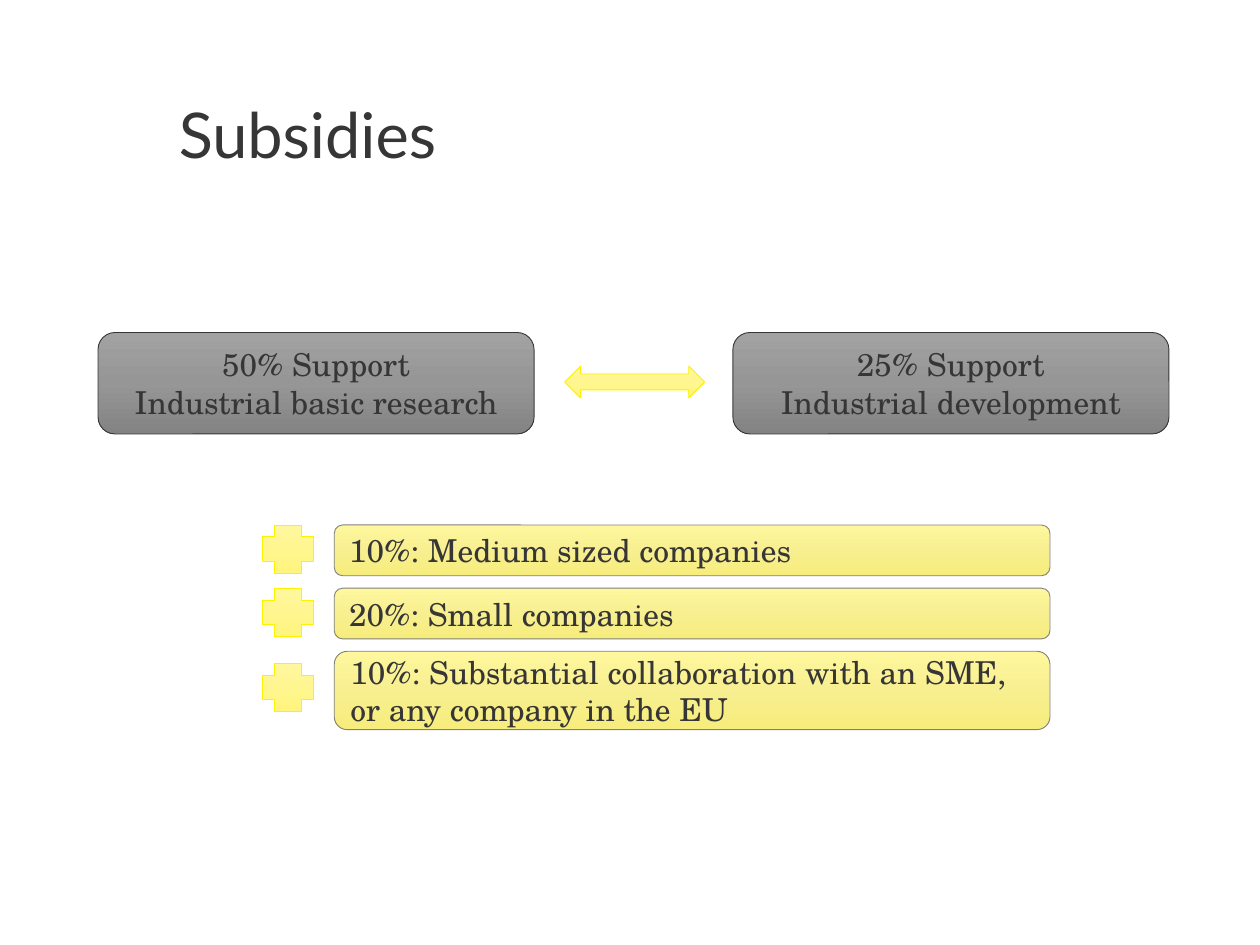
from copy import deepcopy

from pptx import Presentation
from pptx.dml.color import RGBColor
from pptx.enum.shapes import MSO_SHAPE as Shape
from pptx.enum.text import MSO_ANCHOR as Anchor, MSO_AUTO_SIZE as AutoSize, PP_ALIGN as Align
from pptx.oxml.ns import qn
from pptx.util import Pt

COLORS = {"text": "373636", "support_line": "373636", "accent_line": "FFF200", "bonus_line": "808080"}
GRADIENTS = {
    "support": ("A2A2A2", "969696", "838383"),
    "accent": ("FFF79E", "FFF690", "FFF57C"),
    "bonus": ("FFF79D", "F7EF90", "F7ED7C"),
}
TITLE_FONT = "Lato"
BODY_FONT = "TeX Gyre Schola"


def add_text(para, text, font, size):
    span = para.add_run()
    span.text = text
    span.font.name = font
    span.font.size = Pt(size)
    span.font.color.rgb = RGBColor.from_string(COLORS["text"])


def add_gradient_shape(page, kind, box, style):
    shape = page.shapes.add_shape(kind, *map(Pt, box))
    shape.shadow.inherit = False
    shape.fill.gradient()
    shape.fill.gradient_angle = 270
    stop_list = shape.element.spPr.find(qn("a:gradFill")).find(qn("a:gsLst"))
    stop_list.insert(1, deepcopy(stop_list[0]))
    for index, (stop, color) in enumerate(zip(shape.fill.gradient_stops, GRADIENTS[style])):
        stop.position = index / 2
        stop.color.rgb = RGBColor.from_string(color)
    shape.line.color.rgb = RGBColor.from_string(COLORS[style + "_line"])
    shape.line.width = Pt(0.5)
    return shape


def add_label(page, box, style, lines, align):
    frame = add_gradient_shape(page, Shape.ROUNDED_RECTANGLE, box, style).text_frame
    frame.word_wrap = True
    frame.vertical_anchor = Anchor.MIDDLE
    for index, line in enumerate(lines):
        para = frame.add_paragraph() if index else frame.paragraphs[0]
        para.alignment = align
        add_text(para, line, BODY_FONT, 18)


def place_title(page, box, text):
    title = page.shapes.title
    title.left, title.top, title.width, title.height = map(Pt, box)
    frame = title.text_frame
    frame.margin_left = frame.margin_top = frame.margin_right = frame.margin_bottom = 0
    frame.auto_size = AutoSize.NONE
    frame.word_wrap = True
    frame.vertical_anchor = Anchor.TOP
    para = frame.paragraphs[0]
    para.alignment = Align.LEFT
    para.line_spacing = Pt(38)
    add_text(para, text, TITLE_FONT, 36)


def place_support(page, box, labels):
    left, top, width, height = box
    label_width = 249.2
    for x, lines in zip((left, left + width - label_width), labels):
        add_label(page, (x, top, label_width, height), "support", lines, Align.CENTER)
    arrow_width, arrow_height = 80, 18.2
    arrow_box = (left + (width - arrow_width) / 2 + 0.7, top + (height - arrow_height) / 2 - 0.7,
                 arrow_width, arrow_height)
    add_gradient_shape(page, Shape.LEFT_RIGHT_ARROW, arrow_box, "accent")


def place_bonuses(page, box, bonuses):
    left, top, width, height = box
    plus_width, plus_height, indent, gap = 29.2, 27.4, 41, 7.1
    for text, row_height, plus_drop in bonuses:
        add_label(page, (left + indent, top, width - indent, row_height), "bonus", [text], Align.LEFT)
        add_gradient_shape(page, Shape.CROSS, (left, top + plus_drop, plus_width, plus_height), "accent")
        top += row_height + gap


def main():
    deck = Presentation()
    deck.slide_width, deck.slide_height = Pt(720), Pt(540)
    page = deck.slides.add_slide(deck.slide_layouts[5])
    place_title(page, (102.2, 59.8, 584, 87.8), "Subsidies")
    place_support(page, (56, 190, 612, 58), [
        ("50% Support", "Industrial basic research"),
        ("25% Support", "Industrial development"),
    ])
    place_bonuses(page, (150, 300, 450, 117), [
        ("10%: Medium sized companies", 29, 0),
        ("20%: Small companies", 29, 0),
        ("10%: Substantial collaboration with an SME, or any company in the EU", 44.8, 6.9),
    ])
    deck.save("out.pptx")


if __name__ == "__main__":
    main()
